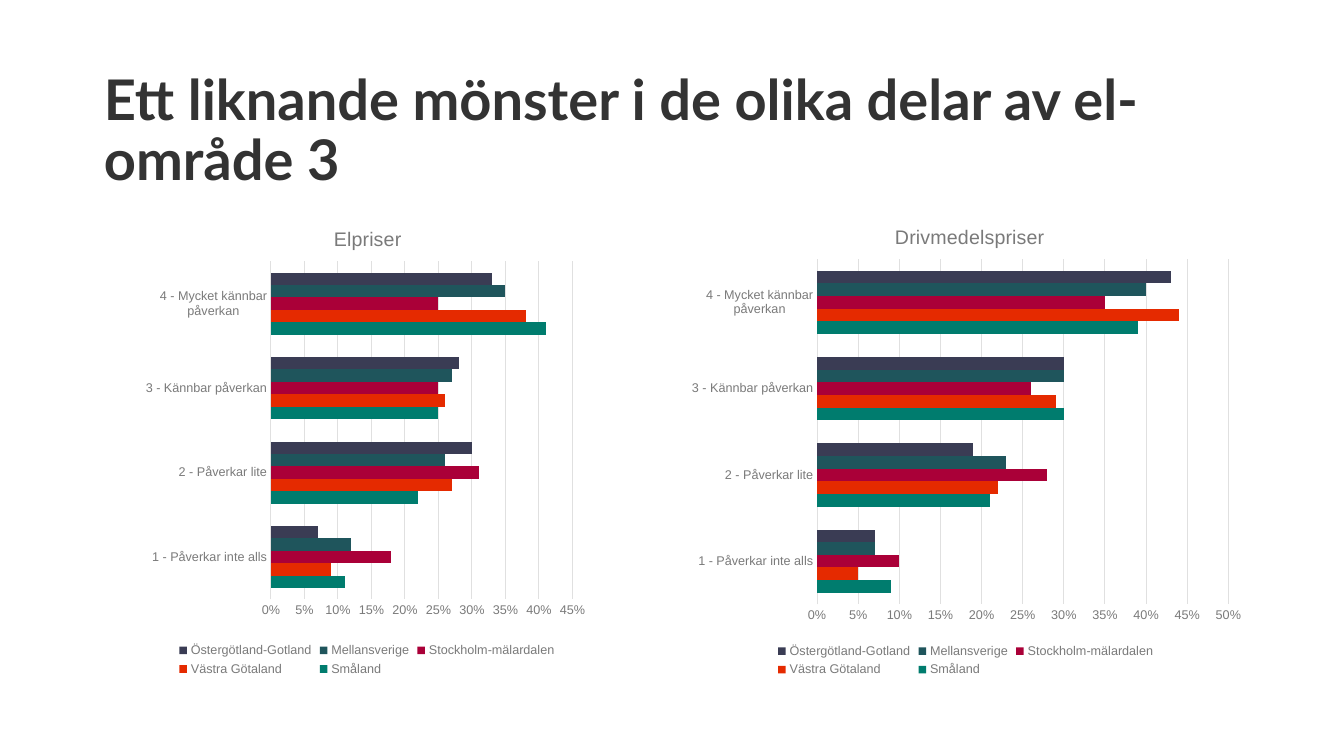
from lxml import etree
from pptx import Presentation, util as u
from pptx.chart.data import CategoryChartData
from pptx.dml.color import RGBColor
from pptx.enum import chart as ch, text
from pptx.oxml.ns import qn

WIDE, HIGH = u.Inches(13.33), u.Inches(7.5)
INK = RGBColor(0x33, 0x33, 0x33)
GREY = RGBColor(0x7A, 0x7A, 0x7A)
PALE = RGBColor(0xE0, 0xE0, 0xE0)
GREEN = RGBColor(0x00, 0x7C, 0x6E)
RED = RGBColor(0xE5, 0x2A, 0x00)
WINE = RGBColor(0xAA, 0x00, 0x38)
TEAL = RGBColor(0x1F, 0x55, 0x5C)
NAVY = RGBColor(0x3A, 0x3C, 0x54)

LEVELS = ["1 - Påverkar inte alls", "2 - Påverkar lite",
          "3 - Kännbar påverkan", "4 - Mycket kännbar påverkan"]
AREAS = [("Småland", GREEN), ("Västra Götaland", RED),
         ("Stockholm-mälardalen", WINE), ("Mellansverige", TEAL),
         ("Östergötland-Gotland", NAVY)]
POWER = [(0.11, 0.22, 0.25, 0.41), (0.09, 0.27, 0.26, 0.38),
         (0.18, 0.31, 0.25, 0.25), (0.12, 0.26, 0.27, 0.35),
         (0.07, 0.30, 0.28, 0.33)]
FUEL = [(0.09, 0.21, 0.30, 0.39), (0.05, 0.22, 0.29, 0.44),
        (0.10, 0.28, 0.26, 0.35), (0.07, 0.23, 0.30, 0.40),
        (0.07, 0.19, 0.30, 0.43)]


def place(x, y, w, h):
    """Turn shares of the slide into lengths."""
    return int(x * WIDE), int(y * HIGH), int(w * WIDE), int(h * HIGH)


def style(font, size, color, name="Arial", bold=False):
    font.size, font.name, font.bold = u.Pt(size), name, bold
    font.color.rgb = color


def layout(node, index, **shares):
    """Fix a chart part at shares of the chart's size."""
    for old in node.findall(qn("c:layout")):
        node.remove(old)
    outer = etree.Element(qn("c:layout"))
    manual = etree.SubElement(outer, qn("c:manualLayout"))
    if "w" in shares:
        etree.SubElement(manual, qn("c:layoutTarget")).set("val", "inner")
    for key in ("x", "y"):
        etree.SubElement(manual, qn(f"c:{key}Mode")).set("val", "edge")
    for key, share in shares.items():
        etree.SubElement(manual, qn(f"c:{key}")).set("val", str(share))
    node.insert(index, outer)


def add_title(slide, words, box):
    frame = slide.shapes.add_textbox(*place(*box)).text_frame
    frame.word_wrap = True
    frame.vertical_anchor = text.MSO_ANCHOR.MIDDLE
    para = frame.paragraphs[0]
    para.line_spacing = 0.9
    run = para.add_run()
    run.text = words
    style(run.font, 40, INK, "Lato", True)


def set_axes(chart, top):
    cat, val = chart.category_axis, chart.value_axis
    for axis in (cat, val):
        axis.major_tick_mark = axis.minor_tick_mark = ch.XL_TICK_MARK.NONE
        style(axis.tick_labels.font, 9, GREY)
    val.minimum_scale, val.maximum_scale, val.major_unit = 0, top, 0.05
    val.tick_labels.number_format = "###0%"
    val.tick_labels.number_format_is_linked = False
    val.format.line.fill.background()
    val.has_major_gridlines = True
    for line in (cat.format.line, val.major_gridlines.format.line):
        line.color.rgb, line.width = PALE, u.Pt(0.75)


def add_bars(slide, name, rows, box, top, head, plot):
    data = CategoryChartData(number_format="###0%")
    data.categories = LEVELS
    for (area, _), row in zip(AREAS, rows):
        data.add_series(area, row)
    chart = slide.shapes.add_chart(
        ch.XL_CHART_TYPE.BAR_CLUSTERED, *place(*box), data).chart
    style(chart.font, 10, INK)

    chart.has_title = True
    run = chart.chart_title.text_frame.paragraphs[0].add_run()
    run.text = name
    style(run.font, 14, GREY)
    layout(chart.chart_title._element, 1, **head)
    layout(chart._chartSpace.chart.plotArea, 0, **plot)

    bars = chart.plots[0]
    bars.gap_width, bars.overlap, bars.vary_by_categories = 182, 0, False
    for series, (_, color) in zip(bars.series, AREAS):
        series.format.fill.solid()
        series.format.fill.fore_color.rgb = color
    set_axes(chart, top)

    chart.has_legend = True
    chart.legend.position = ch.XL_LEGEND_POSITION.BOTTOM
    chart.legend.include_in_layout = False
    style(chart.legend.font, 9, GREY)


def main():
    deck = Presentation()
    deck.slide_width, deck.slide_height = WIDE, HIGH
    slide = deck.slides.add_slide(deck.slide_layouts[6])
    add_title(slide, "Ett liknande mönster i de olika delar av el-område 3",
              (0.07, 0.08, 0.86, 0.19))
    add_bars(slide, "Elpriser", POWER, (0.103, 0.27, 0.34, 0.63), 0.45,
             dict(x=0.42, y=0.04), dict(x=0.29, y=0.12, w=0.66, h=0.71))
    add_bars(slide, "Drivmedelspriser", FUEL, (0.506, 0.267, 0.425, 0.634), 0.5,
             dict(x=0.37, y=0.04), dict(x=0.24, y=0.12, w=0.72, h=0.72))
    deck.save("out.pptx")


if __name__ == "__main__":
    main()
